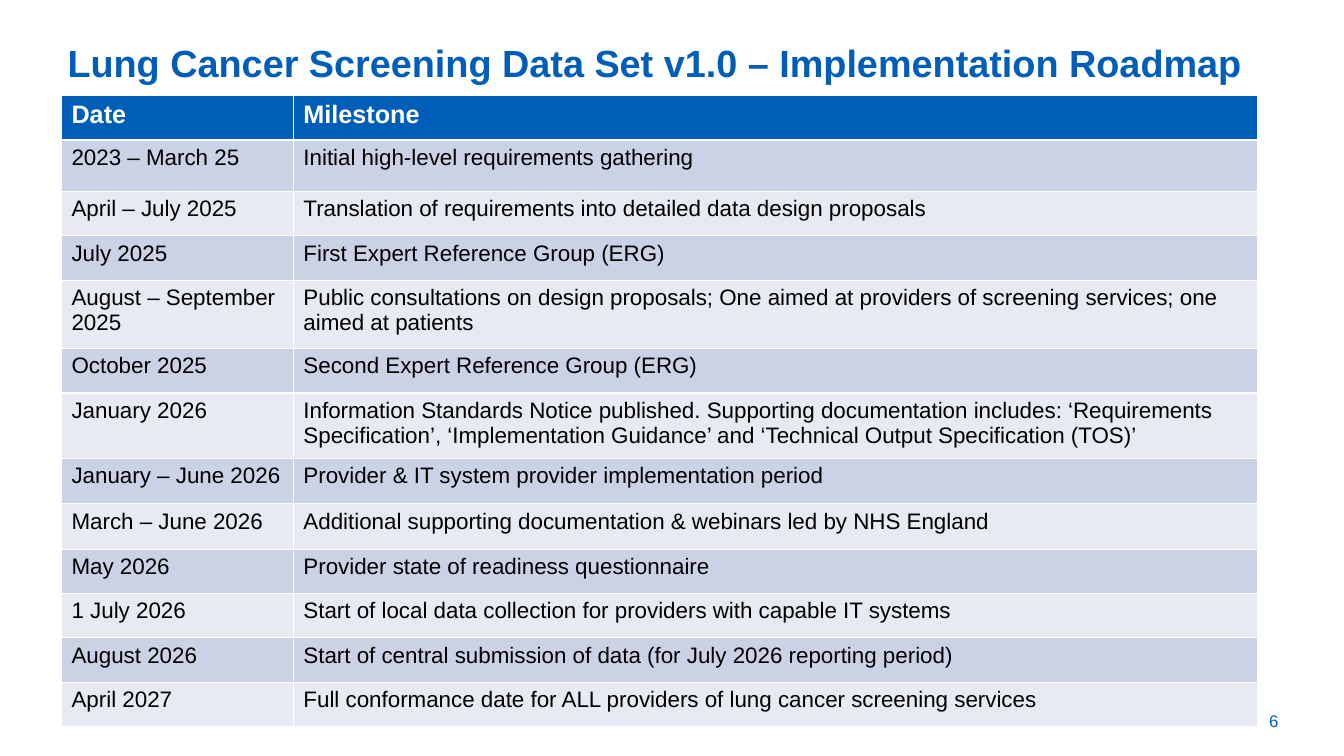
from pptx import Presentation
from pptx.dml.color import RGBColor
from pptx.enum.text import MSO_ANCHOR, PP_ALIGN
from pptx.util import Inches, Pt

BLUE = RGBColor(0x00, 0x5E, 0xB8)
WHITE = RGBColor(0xFF, 0xFF, 0xFF)
BLACK = RGBColor(0x00, 0x00, 0x00)
DARK_BAND = RGBColor(0xCC, 0xD2, 0xE6)
LIGHT_BAND = RGBColor(0xE7, 0xEA, 0xF3)
LEFT, RIGHT = PP_ALIGN.LEFT, PP_ALIGN.RIGHT
TOP, MIDDLE = MSO_ANCHOR.TOP, MSO_ANCHOR.MIDDLE

COLS = [2.3, 9.56]
ROW = 0.44  # usual row height
ROWS = [  # date, milestone, height
    ("Date", "Milestone", ROW),
    ("2023 – March 25", "Initial high-level requirements gathering", 0.51),
    ("April – July 2025",
     "Translation of requirements into detailed data design proposals", ROW),
    ("July 2025", "First Expert Reference Group (ERG)", ROW),
    ("August – September 2025",
     "Public consultations on design proposals; One aimed at providers of "
     "screening services; one aimed at patients", 0.68),
    ("October 2025", "Second Expert Reference Group (ERG)", ROW),
    ("January 2026",
     "Information Standards Notice published. Supporting documentation "
     "includes: ‘Requirements Specification’, ‘Implementation Guidance’ and "
     "‘Technical Output Specification (TOS)’", 0.65),
    ("January – June 2026",
     "Provider & IT system provider implementation period", 0.45),
    ("March – June 2026",
     "Additional supporting documentation & webinars led by NHS England", 0.45),
    ("May 2026", "Provider state of readiness questionnaire", ROW),
    ("1 July 2026",
     "Start of local data collection for providers with capable IT systems", ROW),
    ("August 2026",
     "Start of central submission of data (for July 2026 reporting period)", ROW),
    ("April 2027",
     "Full conformance date for ALL providers of lung cancer screening services",
     ROW),
]


def write(frame, text, size, color, bold=False):
    para = frame.paragraphs[0]
    para.text = text
    font = para.font
    font.name, font.size, font.bold = "Arial", Pt(size), bold
    font.color.rgb = color
    return para


def add_label(text, place, size, bold, align, anchor):
    frame = slide.shapes.add_textbox(*map(Inches, place)).text_frame
    frame.word_wrap = True
    frame.vertical_anchor = anchor
    frame.margin_left = frame.margin_right = 0
    frame.margin_top = frame.margin_bottom = 0
    write(frame, text, size, BLUE, bold).alignment = align


prs = Presentation()
prs.slide_width, prs.slide_height = Inches(13.33), Inches(7.5)
slide = prs.slides.add_slide(prs.slide_layouts[6])

add_label("Lung Cancer Screening Data Set v1.0 – Implementation Roadmap",
          (0.67, 0.39, 12, 0.5), 27, True, LEFT, TOP)
add_label("6", (11.9, 7.03, 0.78, 0.24), 12, False, RIGHT, MIDDLE)

height = sum(row[2] for row in ROWS)
table = slide.shapes.add_table(
    len(ROWS), len(COLS), Inches(0.61), Inches(0.95),
    Inches(sum(COLS)), Inches(height)).table
for column, width in zip(table.columns, COLS):
    column.width = Inches(width)

for r, (date, milestone, height) in enumerate(ROWS):
    table.rows[r].height = Inches(height)
    head = r == 0
    band = BLUE if head else DARK_BAND if r % 2 else LIGHT_BAND
    for c, text in enumerate((date, milestone)):
        cell = table.cell(r, c)
        cell.fill.solid()
        cell.fill.fore_color.rgb = band
        write(cell.text_frame, text, 18 if head else 16,
              WHITE if head else BLACK, head)

prs.save("out.pptx")
